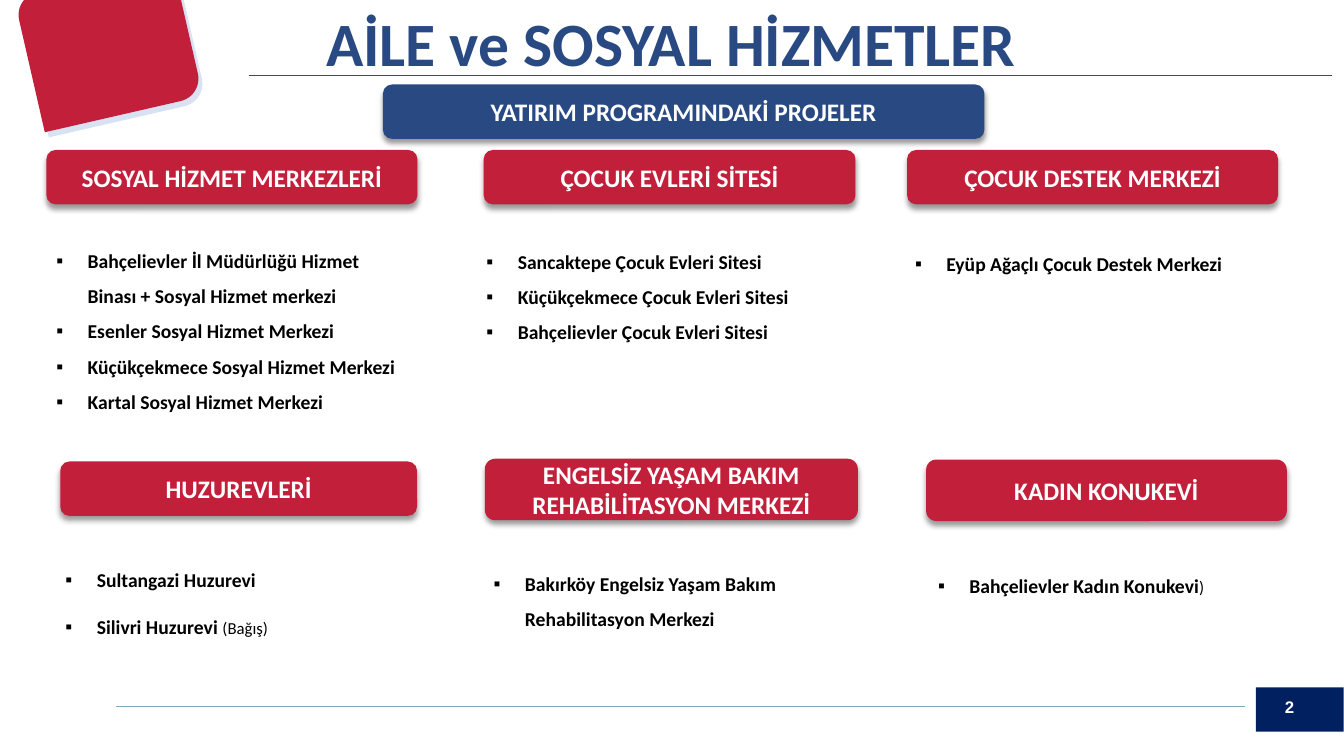
from dataclasses import dataclass

from lxml.etree import SubElement
from pptx import Presentation
from pptx.dml.color import RGBColor
from pptx.enum.shapes import MSO_CONNECTOR as Connector, MSO_SHAPE as Shape
from pptx.enum.text import MSO_ANCHOR as Anchor, PP_ALIGN as Align
from pptx.oxml.ns import qn
from pptx.util import Cm, Pt


@dataclass(frozen=True)
class Theme:
    """Colours, fonts and type sizes of the slide."""
    blue: str = "294983"
    red: str = "C21F3A"
    navy: str = "002060"
    tint: str = "4472C4"
    rule: str = "005AAA"
    footer: str = "81ABB8"
    white: str = "FFFFFF"
    black: str = "000000"
    font: str = "Calibri"
    number_font: str = "Arial"
    title: int = 44
    heading: int = 18
    body: int = 14
    small: int = 12


THEME = Theme()

HEADINGS = [
    ("SOSYAL HİZMET MERKEZLERİ", (1.17, 3.78, 9.35, 1.37)),
    ("ÇOCUK EVLERİ SİTESİ", (12.19, 3.78, 9.37, 1.37)),
    ("ÇOCUK DESTEK MERKEZİ", (22.86, 3.78, 9.35, 1.37)),
    ("HUZUREVLERİ", (1.52, 11.63, 8.99, 1.37)),
    ("ENGELSİZ YAŞAM BAKIM REHABİLİTASYON MERKEZİ", (12.22, 11.56, 9.4, 1.55)),
    ("KADIN KONUKEVİ", (23.34, 11.58, 9.09, 1.55)),
]

LISTS = [
    ((1.17, 5.26, 9.35, 5.87), [
        ("Bahçelievler İl Müdürlüğü Hizmet Binası + Sosyal Hizmet merkezi", "", 1.5),
        ("Esenler Sosyal Hizmet Merkezi", "", 1.5),
        ("Küçükçekmece Sosyal Hizmet Merkezi", "", 1.5),
        ("Kartal Sosyal Hizmet Merkezi", "", 1.5)]),
    ((12.01, 4.39, 9.35, 5.87), [
        ("Sancaktepe Çocuk Evleri Sitesi", "", 1.5),
        ("Küçükçekmece Çocuk Evleri Sitesi", "", 1.5),
        ("Bahçelievler Çocuk Evleri Sitesi", "", 1.5)]),
    ((22.81, 4.75, 9.37, 3.18), [("Eyüp Ağaçlı Çocuk Destek Merkezi", "", 2)]),
    ((1.4, 12.37, 8.86, 5.66), [
        ("Sultangazi Huzurevi", "", 1),
        ("Silivri Huzurevi ", "(Bağış)", 2)]),
    ((12.19, 13.36, 9.22, 3.28), [
        ("Bakırköy Engelsiz Yaşam Bakım Rehabilitasyon Merkezi", "", 1.5)]),
    ((23.39, 12.93, 8.99, 3.35), [("Bahçelievler Kadın Konukevi", ")", 1.5)]),
]


def lengths(values):
    """Turn centimetre values into lengths."""
    return [Cm(value) for value in values]


def style(span, size, color, bold=True, font=THEME.font):
    """Format one run."""
    span.font.size = Pt(size)
    span.font.bold = bold
    span.font.name = font
    span.font.color.rgb = RGBColor.from_string(color)


def add_box(page, kind, place, fill):
    """Add a plain filled shape without outline or shadow."""
    box = page.shapes.add_shape(kind, *lengths(place))
    box.shadow.inherit = False
    box.fill.solid()
    box.fill.fore_color.rgb = RGBColor.from_string(fill)
    box.line.fill.background()
    return box


def add_rule(page, left, right, top, color, width):
    """Add a horizontal line."""
    rule = page.shapes.add_connector(
        Connector.STRAIGHT, *lengths((left, top, right, top)))
    rule.line.color.rgb = RGBColor.from_string(color)
    rule.line.width = Pt(width)
    SubElement(rule._element.spPr, qn("a:effectLst"))


def add_label(page, text, place, size, color, align, font=THEME.font):
    """Add a one-line text box."""
    box = page.shapes.add_textbox(*lengths(place))
    box.text_frame.word_wrap = True
    para = box.text_frame.paragraphs[0]
    para.text = text
    para.alignment = align
    style(para.runs[0], size, color, font=font)


def set_alpha(color_element, percent):
    """Set the opacity of a colour element."""
    SubElement(color_element, qn("a:alpha"), val=str(percent * 1000))


def add_heading(page, text, place, fill):
    """Add a rounded heading with a soft shadow."""
    box = add_box(page, Shape.ROUNDED_RECTANGLE, place, fill)
    effects = box._element.spPr.find(qn("a:effectLst"))
    shadow = SubElement(effects, qn("a:outerShdw"), blurRad=str(Pt(4)),
                        dist=str(Pt(3)), dir="5400000", algn="t", rotWithShape="0")
    set_alpha(SubElement(shadow, qn("a:srgbClr"), val=THEME.black), 40)
    frame = box.text_frame
    frame.word_wrap = True
    frame.vertical_anchor = Anchor.MIDDLE
    para = frame.paragraphs[0]
    para.text = text
    para.alignment = Align.CENTER
    style(para.runs[0], THEME.heading, THEME.white)


def add_list(page, place, items):
    """Add a bulleted list of projects, each with an optional light note."""
    box = page.shapes.add_textbox(*lengths(place))
    frame = box.text_frame
    frame.word_wrap = True
    frame.vertical_anchor = Anchor.MIDDLE
    for index, (text, note, spacing) in enumerate(items):
        para = frame.add_paragraph() if index else frame.paragraphs[0]
        para.text = text
        add_bullet(para)
        para.line_spacing = float(spacing)
        style(para.runs[0], THEME.body, THEME.black)
        if note:
            span = para.add_run()
            span.text = note
            style(span, THEME.small, THEME.black, bold=False)


def add_bullet(para):
    """Give a paragraph a square bullet and a hanging indent."""
    properties = para._p.get_or_add_pPr()
    indent = Cm(0.79)
    properties.set("marL", str(indent))
    properties.set("indent", str(-indent))
    SubElement(properties, qn("a:buFont"), typeface=THEME.number_font)
    SubElement(properties, qn("a:buChar"), char="▪")


def add_corner(page):
    """Add the tilted red corner shape over its pale echo."""
    size = (4.09, 3.48)
    echo = add_box(page, Shape.ROUND_2_DIAG_RECTANGLE, (0.79, -0.43, *size), THEME.tint)
    set_alpha(echo._element.spPr.find(qn("a:solidFill"))[0], 20)
    front = add_box(page, Shape.ROUND_2_DIAG_RECTANGLE, (0.69, -0.56, *size), THEME.red)
    for box in (echo, front):
        box.rotation = 347.1


def add_frame(page):
    """Add the rules, the page number and the corner shape."""
    add_rule(page, 2.92, 31.37, 17.81, THEME.footer, 0.75)
    add_box(page, Shape.RECTANGLE, (31.65, 17.32, 2.21, 1.12), THEME.navy)
    add_label(page, "2", (32.13, 17.42, 2.51, 0.76), THEME.small, THEME.white,
              Align.LEFT, THEME.number_font)
    add_rule(page, 6.27, 33.58, 1.9, THEME.rule, 1)
    add_corner(page)


def main():
    """Build the slide and save it."""
    deck = Presentation()
    deck.slide_width, deck.slide_height = Cm(33.87), Cm(19.05)
    page = deck.slides.add_slide(deck.slide_layouts[6])
    add_frame(page)
    add_label(page, "AİLE ve SOSYAL HİZMETLER", (3.3, 0, 27.25, 2.13),
              THEME.title, THEME.blue, Align.CENTER)
    add_heading(page, "YATIRIM PROGRAMINDAKİ PROJELER",
                (9.65, 2.13, 15.16, 1.37), THEME.blue)
    for place, items in LISTS:
        add_list(page, place, items)
    for text, place in HEADINGS:
        add_heading(page, text, place, THEME.red)
    deck.save("out.pptx")


if __name__ == "__main__":
    main()
